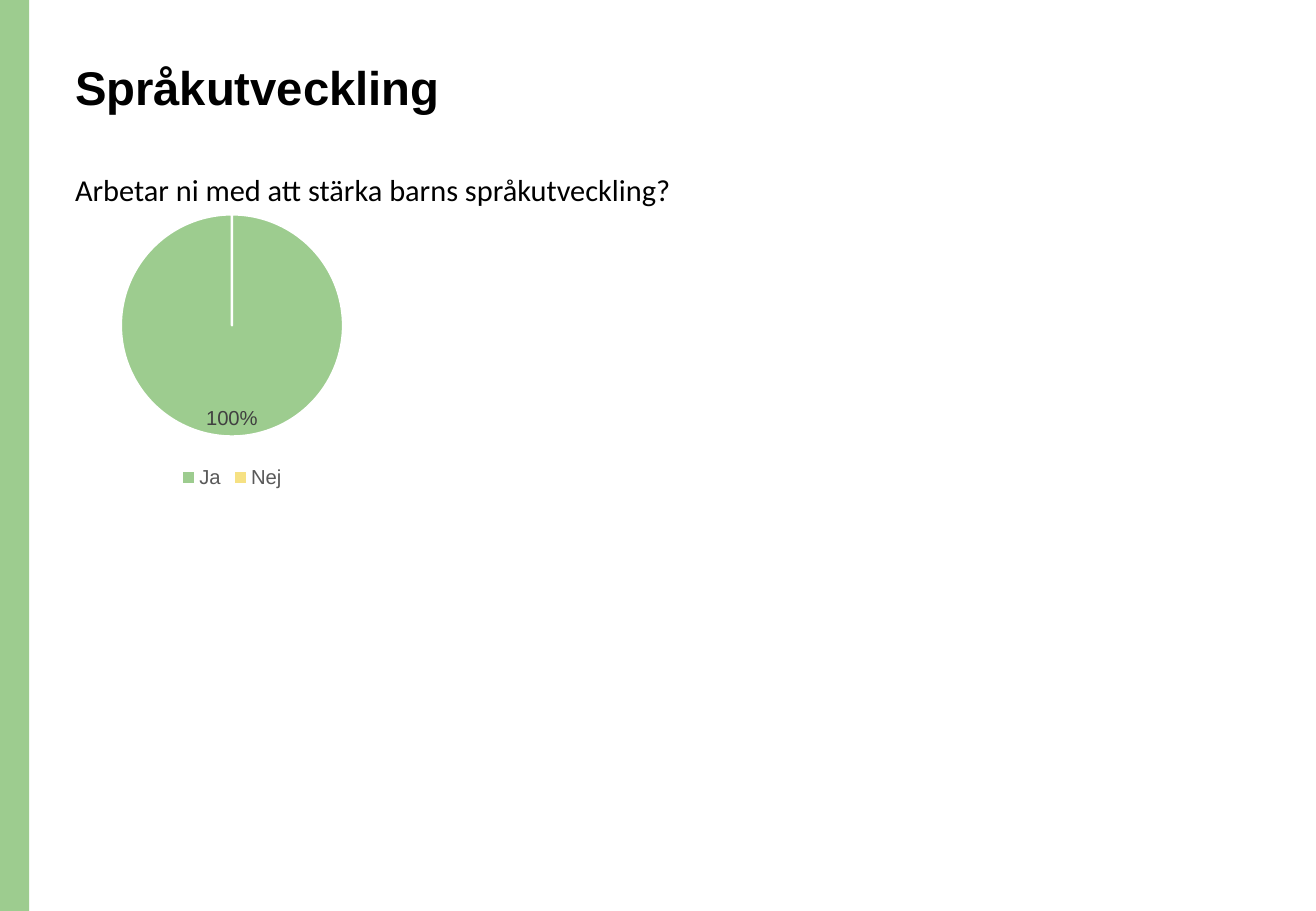
from dataclasses import dataclass

from lxml import etree
from pptx import Presentation
from pptx import util as u
from pptx.chart import data as chart_data
from pptx.dml.color import RGBColor
from pptx.enum import chart as charts, shapes, text
from pptx.oxml import parse_xml
from pptx.oxml.ns import nsdecls, qn


@dataclass(frozen=True)
class Theme:
    """Colours, fonts and type sizes of the slide."""

    green: str = "9DCC8F"
    yellow: str = "F6E183"
    white: str = "FFFFFF"
    black: str = "000000"
    label_grey: str = "404040"
    legend_grey: str = "595959"
    heading_font: str = "Arial"
    body_font: str = "Calibri"
    title_size: int = 28
    question_size: int = 18
    chart_size: int = 12


class SlideBuilder:
    """Draws styled elements on the current slide."""

    def __init__(self, slide, theme):
        self.slide = slide
        self.theme = theme

    def style(self, font, name, size, colour, bold=False):
        """Apply a typeface, size, colour and weight to a font."""
        font.name = name
        font.size = u.Pt(size)
        font.bold = bold
        font.color.rgb = RGBColor.from_string(colour)

    def band(self, left, top, width, height, colour):
        """Add a plain filled rectangle."""
        band = self.slide.shapes.add_shape(
            shapes.MSO_SHAPE.RECTANGLE, *map(u.Cm, (left, top, width, height)))
        band.shadow.inherit = False
        band.fill.solid()
        band.fill.fore_color.rgb = RGBColor.from_string(colour)
        band.line.fill.background()

    def line_of_text(self, wording, place, name, size, spacing, bold=False):
        """Add a top-anchored text box with one paragraph."""
        frame = self.slide.shapes.add_textbox(*map(u.Cm, place)).text_frame
        frame.word_wrap = True
        frame.vertical_anchor = text.MSO_ANCHOR.TOP
        paragraph = frame.paragraphs[0]
        paragraph.text = wording
        paragraph.line_spacing = spacing
        self.style(paragraph.font, name, size, self.theme.black, bold)

    def pie(self, answers, colours, place, plot_area):
        """Add a pie of shares with a legend below and labels on non-zero slices."""
        theme = self.theme
        shares = chart_data.CategoryChartData(number_format="0%")
        shares.categories = list(answers)
        shares.add_series("Series 1", list(answers.values()))
        chart = self.slide.shapes.add_chart(
            charts.XL_CHART_TYPE.PIE, *map(u.Cm, place), shares).chart
        self.style(chart.font, theme.heading_font, theme.chart_size, theme.black)
        chart.has_title = False
        chart.has_legend = True
        chart.legend.position = charts.XL_LEGEND_POSITION.BOTTOM
        chart.legend.include_in_layout = False
        self.style(chart.legend.font, theme.heading_font, theme.chart_size, theme.legend_grey)

        plot = chart.plots[0]
        plot.vary_by_categories = True
        series = plot.series[0]
        labels = series.data_labels
        labels.show_value = True
        labels.number_format = "0%"
        labels.number_format_is_linked = False
        labels.position = charts.XL_LABEL_POSITION.INSIDE_END
        self.style(labels.font, theme.heading_font, theme.chart_size, theme.label_grey)

        for index, (share, colour) in enumerate(zip(answers.values(), colours)):
            slice_format = series.points[index].format
            slice_format.fill.solid()
            slice_format.fill.fore_color.rgb = RGBColor.from_string(colour)
            slice_format.line.color.rgb = RGBColor.from_string(theme.white)
            slice_format.line.width = u.Pt(1.5)
            if not share:
                labels._element.insert(0, parse_xml(
                    f'<c:dLbl {nsdecls("c")}><c:idx val="{index}"/>'
                    '<c:delete val="1"/></c:dLbl>'))
        self.place_plot(chart, plot_area)

    def place_plot(self, chart, plot_area):
        """Set the plot area as fractions of the chart."""
        area = chart._chartSpace.find(f'.//{qn("c:plotArea")}')
        for layout in area.findall(qn("c:layout")):
            area.remove(layout)
        layout = etree.Element(qn("c:layout"))
        manual = etree.SubElement(layout, qn("c:manualLayout"))
        settings = {"layoutTarget": "inner", "xMode": "edge", "yMode": "edge",
                    **dict(zip("xywh", plot_area))}
        for tag, setting in settings.items():
            etree.SubElement(manual, qn(f"c:{tag}"), val=str(setting))
        area.insert(0, layout)


def main():
    """Build and save the slide."""
    theme = Theme()
    deck = Presentation()
    deck.slide_width, deck.slide_height = u.Cm(27.51), u.Cm(19.05)
    builder = SlideBuilder(deck.slides.add_slide(deck.slide_layouts[6]), theme)
    margin = 1.32
    builder.band(0, 0, 0.61, 19.05, theme.green)
    builder.line_of_text("Språkutveckling", (margin, 1.22, 23.72, 2.59),
                         theme.heading_font, theme.title_size, 0.9, bold=True)
    builder.line_of_text("Arbetar ni med att stärka barns språkutveckling?",
                         (margin, 3.4, 17.81, 1.45),
                         theme.body_font, theme.question_size, 1.07)
    builder.pie({"Ja": 1, "Nej": 0}, (theme.green, theme.yellow),
                (margin, 4.11, 7.06, 6.2), (0.17, 0.06, 0.66, 0.75))
    deck.save("out.pptx")


if __name__ == "__main__":
    main()
